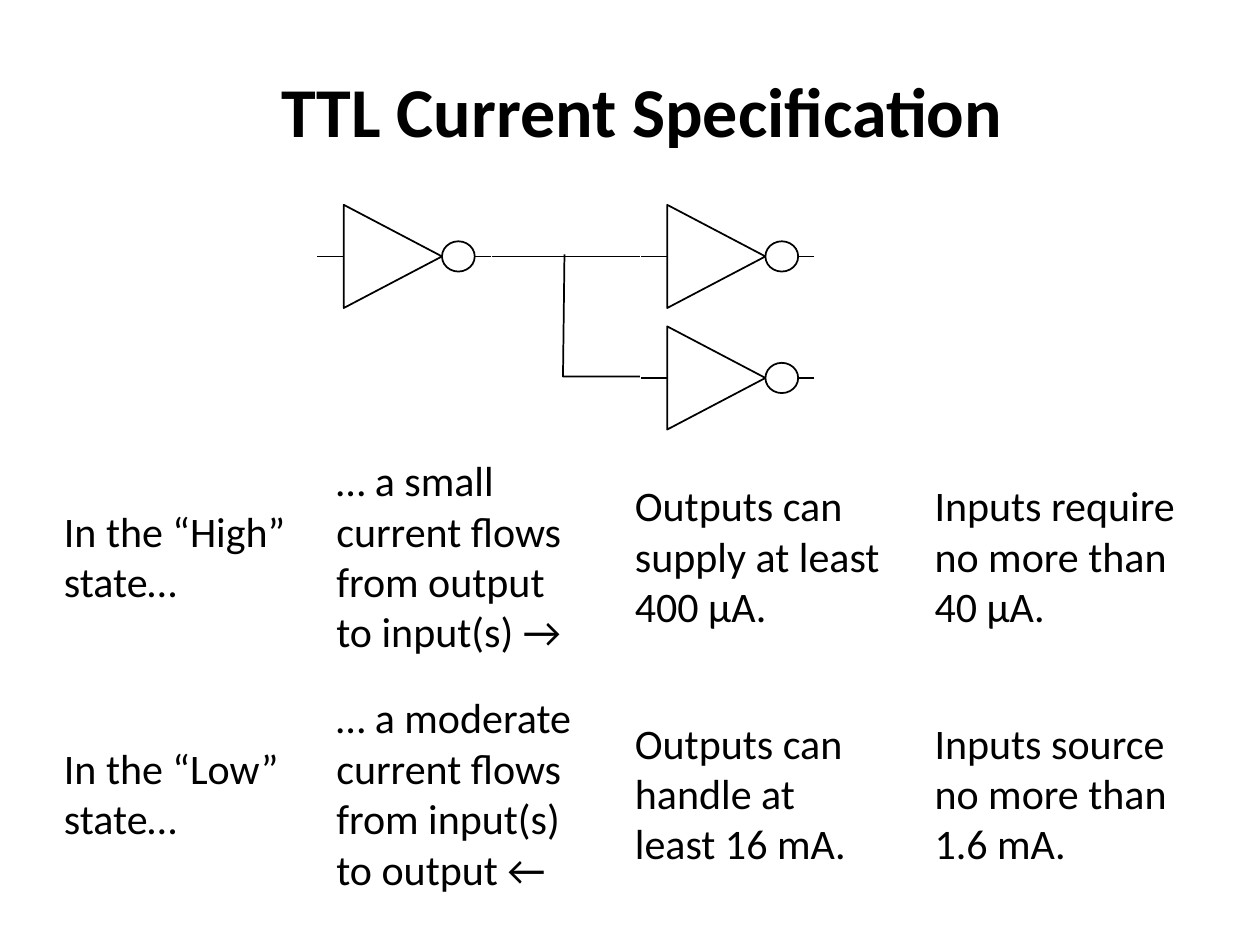
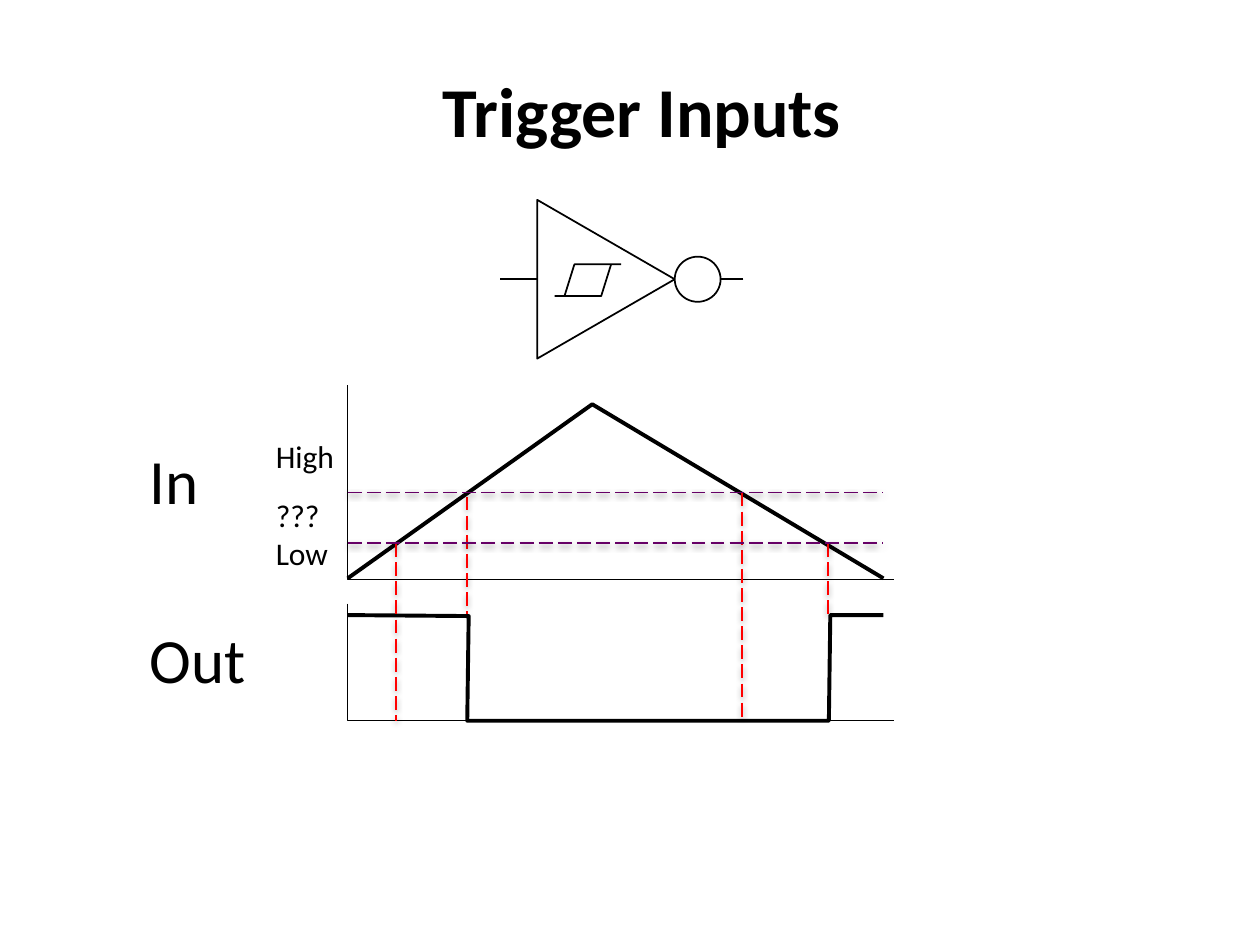
from lxml import etree
from pptx import Presentation
from pptx.dml.color import RGBColor
from pptx.enum.dml import MSO_LINE
from pptx.enum.shapes import MSO_CONNECTOR, MSO_SHAPE
from pptx.enum.text import MSO_ANCHOR, PP_ALIGN
from pptx.oxml import parse_xml
from pptx.oxml.ns import qn
from pptx.util import Cm, Pt

STRAIGHT = MSO_CONNECTOR.STRAIGHT
TRIANGLE, ELLIPSE = MSO_SHAPE.ISOSCELES_TRIANGLE, MSO_SHAPE.OVAL
LONG_DASH = MSO_LINE.LONG_DASH
MIDDLE = MSO_ANCHOR.MIDDLE
LEFT, CENTER = PP_ALIGN.LEFT, PP_ALIGN.CENTER

BLACK = RGBColor(0x00, 0x00, 0x00)
WHITE = RGBColor(0xFF, 0xFF, 0xFF)
RED = RGBColor(0xFF, 0x00, 0x00)
PURPLE = RGBColor(0x66, 0x00, 0x66)
FONT = "Calibri"
SHADOW = (
    '<a:effectLst xmlns:a="http://schemas.openxmlformats.org/drawingml/2006/main">'
    '<a:outerShdw blurRad="40000" dist="20000" dir="5400000" rotWithShape="0">'
    '<a:srgbClr val="000000"><a:alpha val="38000"/></a:srgbClr>'
    '</a:outerShdw></a:effectLst>'
)


def write_text(page, left, top, width, height, text, size,
               bold=False, align=LEFT, wrap=True):
    box = page.shapes.add_textbox(Cm(left), Cm(top), Cm(width), Cm(height))
    frame = box.text_frame
    frame.word_wrap = wrap
    frame.vertical_anchor = MIDDLE
    frame.text = text
    for para in frame.paragraphs:
        para.alignment = align
        for span in para.runs:
            span.font.name = FONT
            span.font.size = Pt(size)
            span.font.bold = bold
            span.font.color.rgb = BLACK
    return frame


def draw_line(page, x1, y1, x2, y2, color=BLACK, dashed=False):
    """Draw a solid wire, or a dashed guide with a soft shadow."""
    line = page.shapes.add_connector(STRAIGHT, Cm(x1), Cm(y1), Cm(x2), Cm(y2))
    line.line.color.rgb = color
    line.line.width = Pt(1)
    properties = line._element.spPr
    if dashed:
        line.line.dash_style = LONG_DASH
        properties.append(parse_xml(SHADOW))
    else:
        etree.SubElement(properties, qn("a:effectLst"))


deck = Presentation()
deck.slide_width, deck.slide_height = Cm(25.4), Cm(19.05)
pages = []
for title in ("TTL Current Specification", "Trigger Inputs"):
    page = deck.slides.add_slide(deck.slide_layouts[6])
    write_text(page, 3.53, 1.22, 18.82, 1.96, title, 40, bold=True, align=CENTER)
    pages.append(page)
current_page, trigger_page = pages

# Inverters: back edge, centre line, scale, triangle height, bubble height
inverters = [
    (current_page, 6.93, 5.17, 1, 2.08, 0.61),
    (current_page, 13.45, 5.17, 1, 2.08, 0.61),
    (current_page, 13.45, 7.62, 1, 2.08, 0.61),
    (trigger_page, 10.83, 5.63, 1.4, 3.2, 0.91),
]
for page, back, middle, scale, gate_height, bubble_height in inverters:
    length, bubble = 1.98 * scale, 0.66 * scale
    tip = back + length
    draw_line(page, tip + bubble + 0.33 * scale, middle, back - 0.53 * scale, middle)
    for kind, left, across, tall in (
        (TRIANGLE, back, length, gate_height),
        (ELLIPSE, tip, bubble, bubble_height),
    ):
        # A quarter turn swaps width and height about the centre
        part = page.shapes.add_shape(
            kind, Cm(left + (across - tall) / 2), Cm(middle - across / 2),
            Cm(tall), Cm(across))
        part.rotation = 90
        part.shadow.inherit = False
        part.fill.solid()
        part.fill.fore_color.rgb = WHITE
        part.line.color.rgb = BLACK
        part.line.width = Pt(1)
draw_line(current_page, 9.91, 5.17, 12.9, 5.17)

# Open outlines: branch wire, axes, waveforms and hysteresis symbol
outlines = [
    (current_page, 1, [(12.9, 7.59), (11.35, 7.59), (11.38, 5.13)]),
    (trigger_page, 0.75, [(7.01, 7.77), (7.01, 11.68), (18.03, 11.68)]),
    (trigger_page, 2.25, [(7.01, 11.66), (11.94, 8.15), (17.81, 11.66)]),
    (trigger_page, 0.75, [(7.01, 12.17), (7.01, 14.53), (18.03, 14.53)]),
    (trigger_page, 2.25, [(7.01, 12.4), (9.45, 12.42), (9.42, 14.53),
                          (16.71, 14.53), (16.74, 12.4), (17.81, 12.4)]),
    (trigger_page, 1, [(12.52, 5.33), (11.58, 5.33), (11.38, 5.97)]),
    (trigger_page, 1, [(11.18, 5.97), (12.12, 5.97), (12.32, 5.33)]),
]
for page, weight, points in outlines:
    corners = [(Cm(x), Cm(y)) for x, y in points]
    builder = page.shapes.build_freeform(*corners[0])
    builder.add_line_segments(corners[1:], close=False)
    outline = builder.convert_to_shape()
    outline.shadow.inherit = False
    outline.fill.background()
    outline.line.color.rgb = BLACK
    outline.line.width = Pt(weight)

# Current statements: one row per logic state
columns = [(1.04, 4.98, 2.31), (6.53, 5.51, 4.37),
           (12.55, 5.51, 3.33), (18.59, 5.51, 3.33)]
states = [
    (11.2, ["In the “High” state…",
            "… a small current flows from output to input(s) →",
            "Outputs can supply at least 400 μA.",
            "Inputs require no more than 40 μA."]),
    (15.98, ["In the “Low” state…",
             "… a moderate current flows from input(s) to output ←",
             "Outputs can handle at least 16 mA.",
             "Inputs source no more than 1.6 mA."]),
]
for middle, statements in states:
    for (left, width, height), statement in zip(columns, statements):
        write_text(current_page, left, middle - height / 2, width, height,
                   statement, 24)

# Switching moments and input thresholds
for x, top, bottom in ((7.98, 10.95, 14.53), (9.42, 10.01, 12.37),
                       (14.96, 9.93, 14.53), (16.69, 10.95, 12.42)):
    draw_line(trigger_page, x, top, x, bottom, RED, dashed=True)
for threshold in (10.95, 9.93):
    draw_line(trigger_page, 7.01, threshold, 17.81, threshold, PURPLE, dashed=True)

write_text(trigger_page, 2.77, 8.76, 1.5, 1.8, "In", 36, wrap=False)
write_text(trigger_page, 2.77, 12.37, 2.46, 1.8, "Out", 36, wrap=False)
levels = write_text(trigger_page, 5.31, 8.67, 1.7, 3.0, "High\n???\nLow", 18, wrap=False)
levels.paragraphs[1].space_before = Pt(12)

deck.save("out.pptx")
